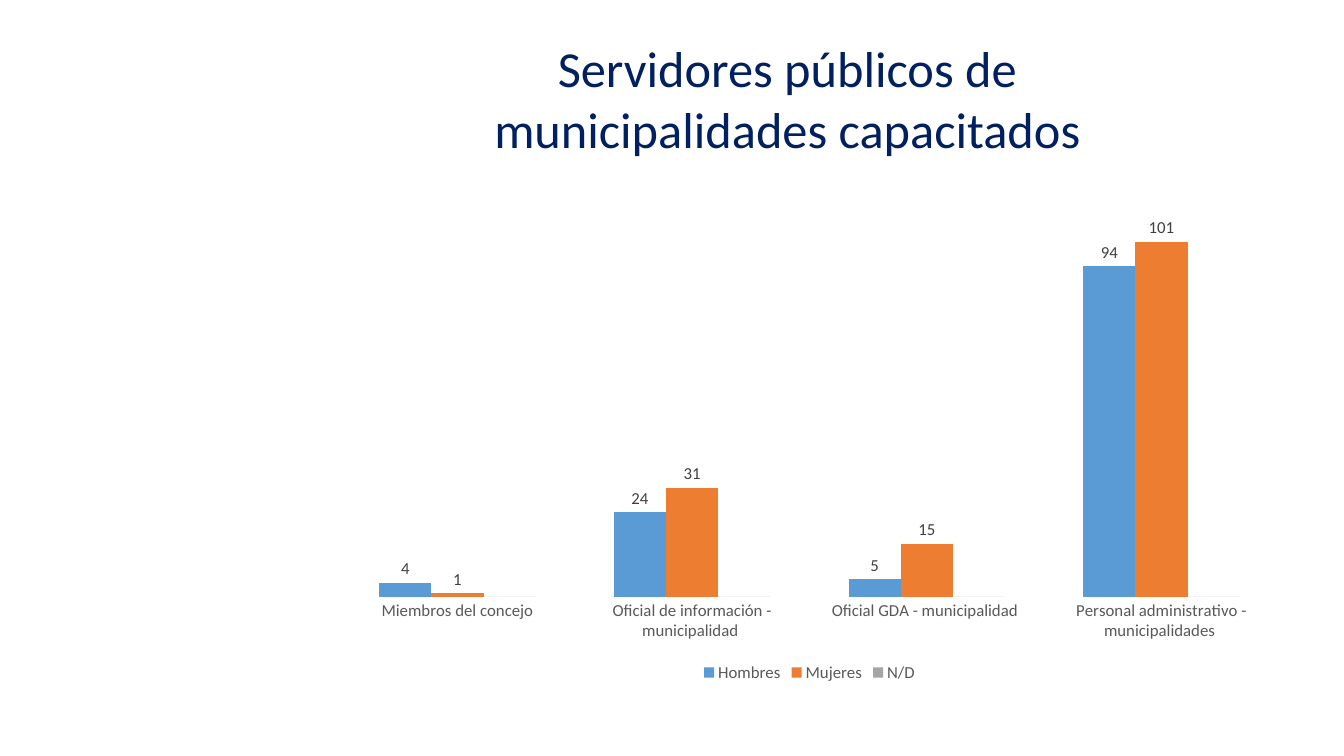
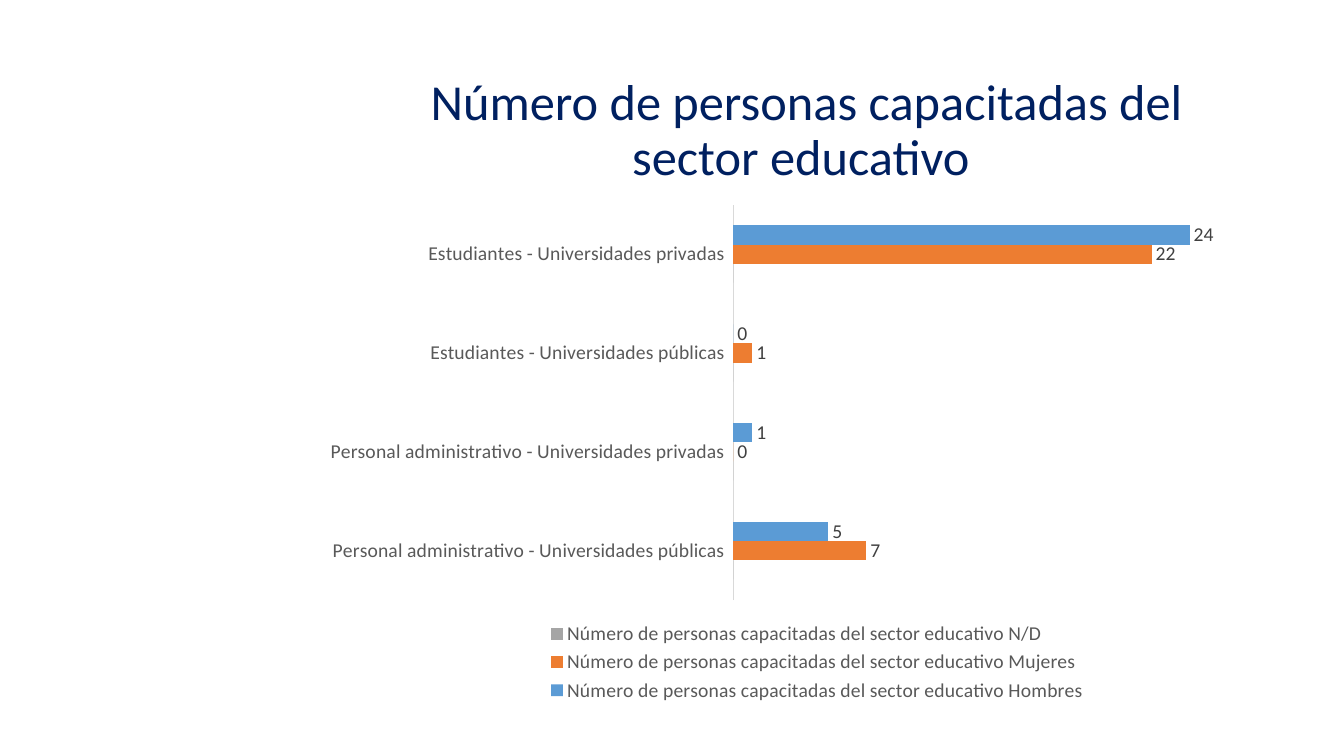
from dataclasses import dataclass

from pptx import Presentation
from pptx import util as u
from pptx.chart import data as chart_data
from pptx.dml import color
from pptx.enum import chart as charts, text
from pptx.oxml import ns


@dataclass(frozen=True)
class Theme:
    """Colours, font and type sizes shared by the slides."""
    font: str = "Calibri"
    title: str = "002060"
    axis_text: str = "595959"
    label_text: str = "404040"
    axis_line: str = "D9D9D9"
    series: tuple = ("5B9BD5", "ED7D31", "A5A5A5")
    title_size: int = 36
    column_size: int = 12
    bar_size: int = 14


THEME = Theme()
GROUPS = ("Hombres", "Mujeres", "N/D")
UNCOUNTED = (None,) * 4


def rgb(value):
    return color.RGBColor.from_string(value)


def set_font(font, size, value):
    font.name = THEME.font
    font.size = u.Pt(size)
    font.color.rgb = rgb(value)


def add_title(slide, words, box, anchor, line_spacing=1.0):
    shape = slide.shapes.add_textbox(*map(u.Cm, box))
    frame = shape.text_frame
    frame.word_wrap = True
    frame.vertical_anchor = anchor
    paragraph = frame.paragraphs[0]
    paragraph.text = words
    paragraph.alignment = text.PP_ALIGN.CENTER
    paragraph.line_spacing = line_spacing
    set_font(paragraph.font, THEME.title_size, THEME.title)


def style_series(series, fill, size):
    series.format.fill.solid()
    series.format.fill.fore_color.rgb = rgb(fill)
    series.invert_if_negative = False
    if any(value is not None for value in series.values):
        labels = series.data_labels
        labels.show_value = True
        labels.position = charts.XL_LABEL_POSITION.OUTSIDE_END
        set_font(labels.font, size, THEME.label_text)


def show_blanks_as_zero(chart):
    for element in chart.element.iter(ns.qn("c:dispBlanksAs")):
        element.set("val", "zero")


def add_clustered_chart(slide, kind, box, categories, series, size, gap, maximum):
    """Add a chart with value labels, a bottom legend and no value axis."""
    data = chart_data.CategoryChartData()
    data.categories = categories
    for name, values in series:
        data.add_series(name, values)
    chart = slide.shapes.add_chart(kind, *map(u.Cm, box), data).chart
    set_font(chart.font, size, THEME.axis_text)
    chart.has_title = False
    show_blanks_as_zero(chart)

    # Legend
    chart.has_legend = True
    chart.legend.position = charts.XL_LEGEND_POSITION.BOTTOM
    chart.legend.include_in_layout = False
    set_font(chart.legend.font, size, THEME.axis_text)

    # Axes
    value_axis = chart.value_axis
    value_axis.visible = False
    value_axis.has_major_gridlines = False
    value_axis.minimum_scale = 0
    value_axis.maximum_scale = maximum
    category_axis = chart.category_axis
    category_axis.major_tick_mark = charts.XL_TICK_MARK.NONE
    set_font(category_axis.tick_labels.font, size, THEME.axis_text)

    # Series
    plot = chart.plots[0]
    plot.vary_by_categories = False
    plot.gap_width = gap
    plot.overlap = 0
    for item, fill in zip(plot.series, THEME.series):
        style_series(item, fill, size)
    return chart


def build_municipalities(slide):
    chart = add_clustered_chart(
        slide, charts.XL_CHART_TYPE.COLUMN_CLUSTERED, (8.08, 4.14, 24.64, 13.16),
        ("Miembros del concejo", "Oficial de información - municipalidad ",
         "Oficial GDA - municipalidad ", "Personal administrativo - municipalidades "),
        zip(GROUPS, ((4, 24, 5, 94), (1, 31, 15, 101), UNCOUNTED)),
        THEME.column_size, gap=150, maximum=120)
    chart.category_axis.format.line.fill.background()
    add_title(slide, "Servidores públicos de municipalidades capacitados",
              (10.55, 0.82, 18.59, 3.33), text.MSO_ANCHOR.TOP)


def build_education(slide):
    heading = "Número de personas capacitadas del sector educativo "
    add_title(slide, heading, (10.26, 1.76, 20.14, 3.12),
              text.MSO_ANCHOR.MIDDLE, line_spacing=0.9)
    chart = add_clustered_chart(
        slide, charts.XL_CHART_TYPE.BAR_CLUSTERED, (7.82, 4.9, 25.55, 12.9),
        [f"{people} - Universidades {sector} "
         for people in ("Estudiantes", "Personal administrativo")
         for sector in ("privadas", "públicas")],
        zip([heading + group for group in GROUPS],
            ((24, None, 1, 5), (22, 1, None, 7), UNCOUNTED)),
        THEME.bar_size, gap=219, maximum=30)
    axis = chart.category_axis
    axis.reverse_order = True
    axis.format.line.color.rgb = rgb(THEME.axis_line)
    axis.format.line.width = u.Pt(0.75)


def main():
    presentation = Presentation()
    presentation.slide_width = u.Cm(33.87)
    presentation.slide_height = u.Cm(19.05)
    blank = presentation.slide_layouts[6]
    for build in (build_municipalities, build_education):
        build(presentation.slides.add_slide(blank))
    presentation.save("out.pptx")


if __name__ == "__main__":
    main()
